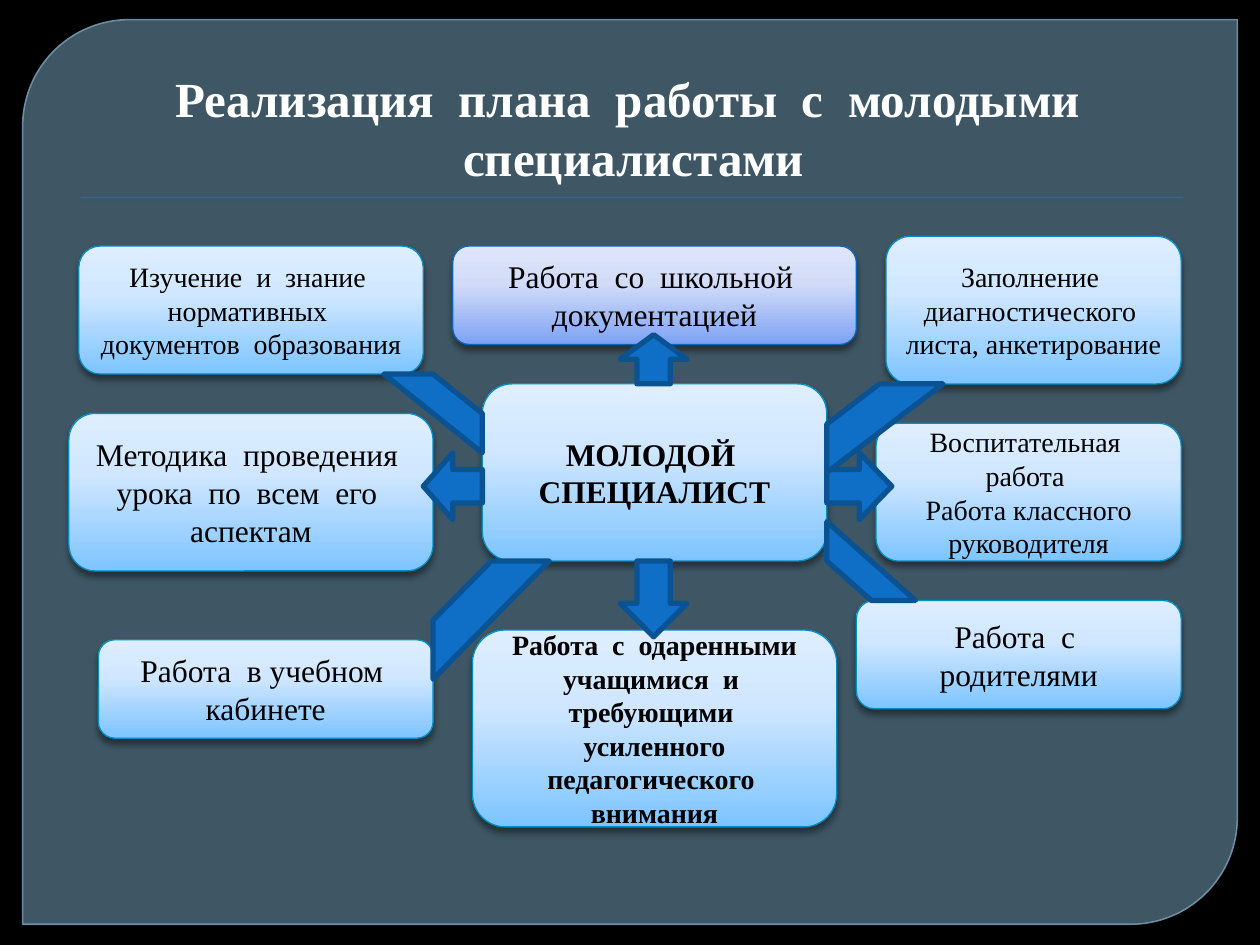
from lxml.etree import SubElement
from pptx import Presentation
from pptx.dml.color import RGBColor as Color
from pptx.enum.shapes import MSO_SHAPE as Kind
from pptx.enum.text import MSO_ANCHOR as Anchor, MSO_AUTO_SIZE as AutoSize, PP_ALIGN as Align
from pptx.oxml.ns import qn
from pptx.util import Inches, Pt

THEME = {
    "font": "Times New Roman", "title": 28, "large": 18, "small": 16,
    "back": "000000", "panel": "61869C", "panel_line": "779BB2",
    "accent": "0F6FC6", "accent_line": "0B5292", "light": "FFFFFF", "dark": "000000",
    "sky": (("7DC4FF", "D0E7FF", "DEEEFF"), "008EC5"),
    "violet": (("7DA2F4", "D2DCF8", "DFE6FA"), "0E65B4"),
}
STOPS = (0, 62, 100)

deck = Presentation()
deck.slide_width, deck.slide_height = Inches(10), Inches(7.5)
CELL = deck.slide_width / 128  # grid of 128 columns by 96 rows
page = deck.slides.add_slide(deck.slide_layouts[5])
page.background.fill.solid()
page.background.fill.fore_color.rgb = Color.from_string(THEME["back"])


def add_box(kind, cells, fill, line=None, width=0.75, shadow=None):
    """Draw a shape on the grid; shadow is (opacity, blur, distance)."""
    box = page.shapes.add_shape(kind, *(round(n * CELL) for n in cells))
    box.shadow.inherit = False
    if isinstance(fill, tuple):
        box.fill.gradient()
        box.fill.gradient_angle = 90
        stops = box.element.spPr.find(".//" + qn("a:gsLst"))
        stops.clear()
        for place, colour in zip(STOPS, fill):
            stop = SubElement(stops, qn("a:gs"), pos=str(place * 1000))
            SubElement(stop, qn("a:srgbClr"), val=colour)
    else:
        box.fill.solid()
        box.fill.fore_color.rgb = Color.from_string(fill)
    if line:
        box.line.color.rgb = Color.from_string(line)
        box.line.width = Pt(width)
    else:
        box.line.fill.background()
    if shadow:
        opacity, blur, distance = shadow
        cast = SubElement(box.element.spPr.find(qn("a:effectLst")), qn("a:outerShdw"),
                          blurRad=str(Pt(blur)), dist=str(Pt(distance)),
                          dir="5400000", rotWithShape="0")
        tint = SubElement(cast, qn("a:srgbClr"), val="000000")
        SubElement(tint, qn("a:alpha"), val=str(opacity * 1000))
    return box


def write(box, lines, size, colour, bold, anchor):
    frame = box.text_frame
    for name, value in {"word_wrap": True, "auto_size": AutoSize.NONE,
                        "vertical_anchor": anchor}.items():
        setattr(frame, name, value)
    frame.text = "\n".join(lines)
    for para in frame.paragraphs:
        para.alignment = Align.CENTER
        for span in para.runs:
            for name, value in {"name": THEME["font"], "size": Pt(size), "bold": bold}.items():
                setattr(span.font, name, value)
            span.font.color.rgb = Color.from_string(colour)


# Background panel and the rule under the title
panel = add_box(Kind.ROUND_2_DIAG_RECTANGLE, (2.3, 2, 123.4, 91.9),
                THEME["panel"], THEME["panel_line"], 0.87)
panel.adjustments[0], panel.adjustments[1] = 0.118, 0
for part, opacity in (("a:solidFill", 65), ("a:ln", 88)):
    tint = panel.element.spPr.find(qn(part)).find(".//" + qn("a:srgbClr"))
    SubElement(tint, qn("a:alpha"), val=str(opacity * 1000))
rule = add_box(Kind.RECTANGLE, (8.2, 20, 112, 0.13), THEME["accent"], shadow=(75, 1, 1))

# Title
title = page.shapes.title
title.left, title.top, title.width, title.height = (
    round(n * CELL) for n in (6.4, 3.6, 115.2, 16))
write(title, ["Реализация  плана  работы  с  молодыми  специалистами"],
      THEME["title"], THEME["light"], True, Anchor.BOTTOM)
title.text_frame.paragraphs[0]._p.get_or_add_pPr().set("marL", str(Inches(0.06)))
for back in (panel, rule):
    title.element.addprevious(back.element)

# Centre and the topics around it: cells, lines, size, bold, palette
topics = [
    ((49, 39, 35, 18), ["МОЛОДОЙ  СПЕЦИАЛИСТ"], "large", True, "sky"),
    ((8, 25, 35, 13), ["Изучение  и  знание  нормативных  документов  образования"],
     "small", False, "sky"),
    ((90, 24, 30, 15), ["Заполнение  диагностического  листа, анкетирование"],
     "small", False, "sky"),
    ((87, 61, 33, 11), ["Работа  с  родителями"], "large", False, "sky"),
    ((89, 43, 31, 14), ["Воспитательная  работа ", "Работа классного руководителя"],
     "small", False, "sky"),
    ((7, 42, 37, 16), ["Методика  проведения  урока  по  всем  его  аспектам"],
     "large", False, "sky"),
    ((46, 25, 41, 10), ["Работа  со  школьной  документацией"], "large", False, "violet"),
    ((10, 65, 34, 10), ["Работа  в учебном  кабинете"], "large", False, "sky"),
    ((48, 64, 37, 20), ["Работа  с  одаренными учащимися  и  требующими  "
                        "усиленного педагогического  внимания"], "small", True, "sky"),
]
for cells, lines, size, bold, palette in topics:
    fill, line = THEME[palette]
    box = add_box(Kind.ROUNDED_RECTANGLE, cells, fill, line, shadow=(43, 4, 3))
    write(box, lines, THEME[size], THEME["dark"], bold, Anchor.MIDDLE)

# Arrows and diagonal stripes from the centre: kind, cells, first adjustment, flip
links = [
    (Kind.UP_ARROW, (63, 34, 6.8, 5), 0.5, None),
    (Kind.LEFT_ARROW, (43, 46, 6, 6.8), 0.5, None),
    (Kind.RIGHT_ARROW, (84, 46, 6.6, 6.8), 0.5, None),
    (Kind.DOWN_ARROW, (63, 57, 6.8, 7.7), 0.5, None),
    (Kind.DIAGONAL_STRIPE, (84, 39, 11.8, 9), 0.453, None),
    (Kind.DIAGONAL_STRIPE, (44, 57, 11.8, 12), 0.5, None),
    (Kind.DIAGONAL_STRIPE, (84, 53, 9, 8), 0.5, "flipV"),
    (Kind.DIAGONAL_STRIPE, (39, 38, 10, 8), 0.5, "flipH"),
]
for kind, cells, adjustment, flip in links:
    link = add_box(kind, cells, THEME["accent"], THEME["accent_line"], 3)
    link.adjustments[0] = adjustment
    if flip:
        link.element.spPr.find(qn("a:xfrm")).set(flip, "1")

deck.save("out.pptx")
